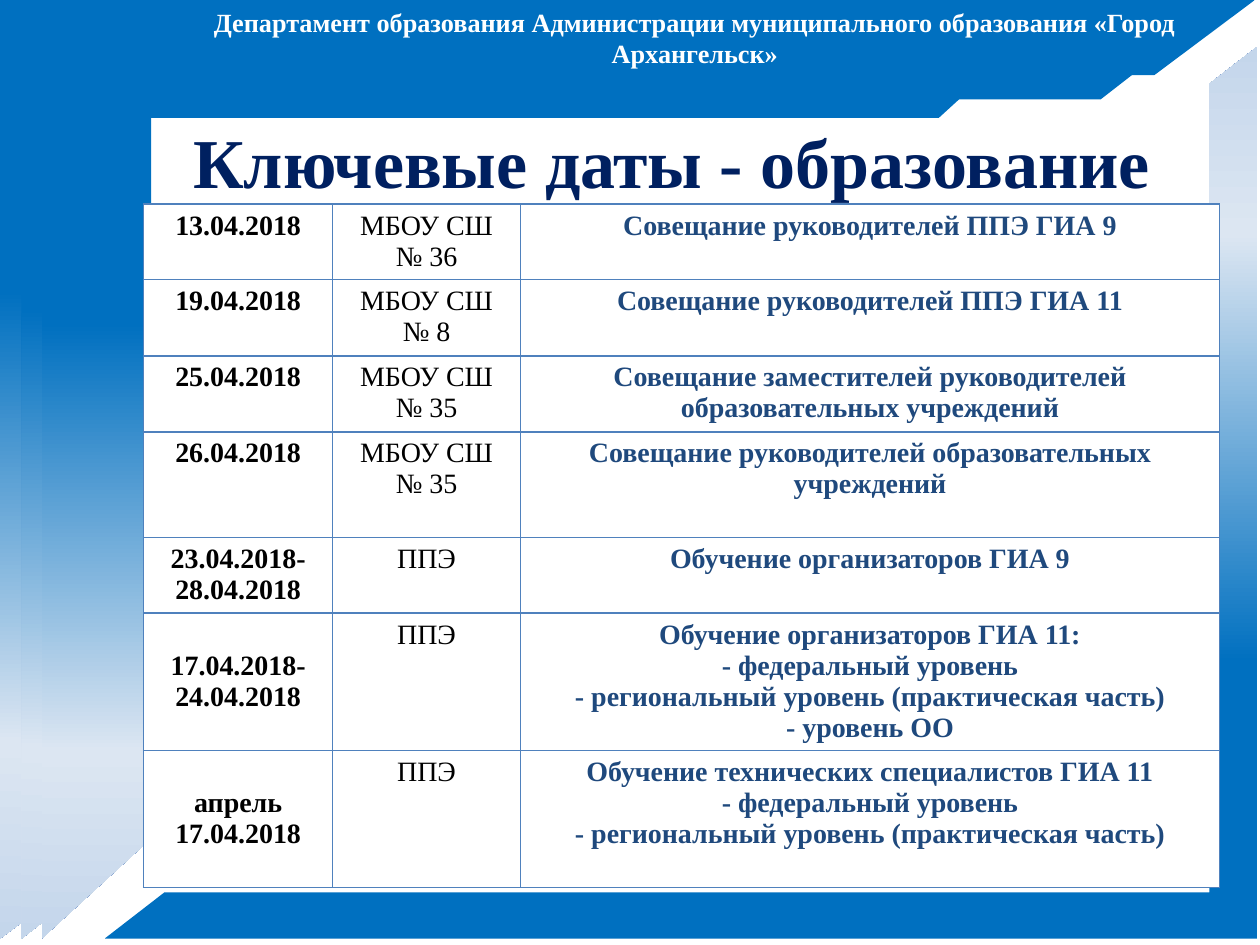
from dataclasses import dataclass
from typing import NamedTuple

from pptx import Presentation
from pptx.dml.color import RGBColor
from pptx.enum.shapes import MSO_SHAPE as Preset
from pptx.enum.text import MSO_ANCHOR as Anchor, PP_ALIGN as Align
from pptx.oxml.ns import qn
from pptx.util import Inches, Pt
from lxml.etree import SubElement

SLIDE_WIDTH, SLIDE_HEIGHT = Inches(10), Inches(7.5)
FONT = "Times New Roman"
WHITE, BLACK, NAVY, BLUE, BORDER = "FFFFFF", "000000", "002060", "1F497D", "4F81BD"
GRADIENT = [(31, "0070C0"), (79, "DCE6F2"), (100, "C4D6EB")]
TABLE_LINE = Pt(17.7)


class Area(NamedTuple):
    """Left, top, width and height as percentages of the slide."""
    left: float
    top: float
    width: float
    height: float


@dataclass
class Frame:
    area: Area
    top_share: float
    side_share: float
    rotation: int = 0


@dataclass
class Event:
    date: str
    place: str
    subject: str
    height: float  # percentage of the slide height
    date_anchor: Anchor = Anchor.TOP


FRAMES = [
    Frame(Area(0, 0, 99.6, 99.33), 0.08, 0.16),
    Frame(Area(1.7, 2.8, 93.1, 96.53), 0.08, 0.112),
    Frame(Area(3.3, 4.93, 77.4, 94.4), 0.08, 0.123),
    Frame(Area(8.3, 4.93, 91.5, 94.4), 0.052, 0.054, 180),
]
COLUMNS = [15, 14.9, 55.5]
LEVELS = "\n- федеральный уровень\n- региональный уровень (практическая часть)"
EVENTS = [
    Event("13.04.2018", "МБОУ СШ № 36", "Совещание руководителей ППЭ ГИА 9", 8),
    Event("19.04.2018", "МБОУ СШ № 8", "Совещание руководителей ППЭ ГИА 11", 8.05),
    Event("25.04.2018", "МБОУ СШ № 35",
          "Совещание заместителей руководителей образовательных учреждений", 8.05),
    Event("26.04.2018", "МБОУ СШ № 35",
          "Совещание руководителей образовательных учреждений", 11.2),
    Event("23.04.2018-28.04.2018", "ППЭ", "Обучение организаторов ГИА 9", 8),
    Event("17.04.2018-24.04.2018", "ППЭ",
          f"Обучение организаторов ГИА 11:{LEVELS}\n- уровень ОО", 14.5, Anchor.MIDDLE),
    Event("апрель\n17.04.2018", "ППЭ",
          f"Обучение технических специалистов ГИА 11{LEVELS}", 14.5, Anchor.MIDDLE),
]


def color(value: str) -> RGBColor:
    return RGBColor.from_string(value)


def across(percent: float) -> int:
    return round(SLIDE_WIDTH * percent / 100)


def down(percent: float) -> int:
    return round(SLIDE_HEIGHT * percent / 100)


def place(area: Area) -> tuple:
    return across(area.left), down(area.top), across(area.width), down(area.height)


def write(text_frame, text: str, size: float, text_color: str, bold: bool = True) -> None:
    text_frame.text = text
    text_frame.word_wrap = True
    for paragraph in text_frame.paragraphs:
        paragraph.alignment = Align.CENTER
        for run in paragraph.runs:
            run.font.name, run.font.size, run.font.bold = FONT, Pt(size), bold
            run.font.color.rgb = color(text_color)


def add_frame(slide, frame: Frame) -> None:
    shape = slide.shapes.add_shape(Preset.HALF_FRAME, *place(frame.area))
    shape.adjustments[0] = frame.top_share
    shape.adjustments[1] = frame.side_share
    shape.rotation = frame.rotation
    shape.shadow.inherit = False
    shape.line.fill.background()
    shape.fill.gradient()
    shape.fill.gradient_angle = 270  # counter-clockwise, so top to bottom
    stops = shape._element.spPr.find(qn("a:gradFill")).find(qn("a:gsLst"))
    for stop in list(stops):
        stops.remove(stop)
    for position, value in GRADIENT:
        stop = SubElement(stops, qn("a:gs"), pos=str(position * 1000))
        SubElement(stop, qn("a:srgbClr"), val=value)


def add_text(slide, area: Area, text: str, size: float, text_color: str,
             top_margin: float) -> None:
    text_frame = slide.shapes.add_textbox(*place(area)).text_frame
    text_frame.margin_top, text_frame.margin_bottom = Inches(top_margin), 0
    write(text_frame, text, size, text_color)


def style_cell(cell) -> None:
    properties = cell._tc.get_or_add_tcPr()
    for side in ("lnL", "lnR", "lnT", "lnB"):
        line = SubElement(properties, qn(f"a:{side}"), w=str(Pt(1)))
        SubElement(SubElement(line, qn("a:solidFill")), qn("a:srgbClr"), val=BORDER)
    cell.fill.solid()
    cell.fill.fore_color.rgb = color(WHITE)


def fill_cell(cell, text: str, text_color: str, bold: bool = True,
              anchor: Anchor = Anchor.TOP) -> None:
    style_cell(cell)
    write(cell.text_frame, text, 16, text_color, bold)
    for paragraph in cell.text_frame.paragraphs:
        paragraph.line_spacing = TABLE_LINE
    cell.vertical_anchor = anchor
    if anchor == Anchor.TOP:
        cell.margin_bottom = 0  # keeps the rows at their set height


def add_schedule(slide, left: float, top: float) -> None:
    area = Area(left, top, sum(COLUMNS), sum(event.height for event in EVENTS))
    table = slide.shapes.add_table(len(EVENTS), len(COLUMNS), *place(area)).table
    table.first_row = table.horz_banding = False
    for column, width in zip(table.columns, COLUMNS):
        column.width = across(width)
    for row, event in zip(table.rows, EVENTS):
        row.height = down(event.height)
        date, venue, subject = row.cells
        fill_cell(date, event.date, BLACK, anchor=event.date_anchor)
        fill_cell(venue, event.place, BLACK, bold=False)
        fill_cell(subject, event.subject, BLUE)


def main() -> None:
    presentation = Presentation()
    presentation.slide_width, presentation.slide_height = SLIDE_WIDTH, SLIDE_HEIGHT
    slide = presentation.slides.add_slide(presentation.slide_layouts[6])

    # Background frames
    for frame in FRAMES:
        add_frame(slide, frame)

    # Department line and title
    add_text(slide, Area(9.5, 0, 91.3, 4.67),
             "Департамент образования Администрации муниципального образования "
             "«Город Архангельск»", 15, WHITE, 0.05)
    add_text(slide, Area(8.3, 12.13, 90, 6.27), "Ключевые даты - образование",
             40, NAVY, 0.03)

    # Schedule of key dates
    add_schedule(slide, 11.4, 21.6)
    presentation.save("out.pptx")


if __name__ == "__main__":
    main()
